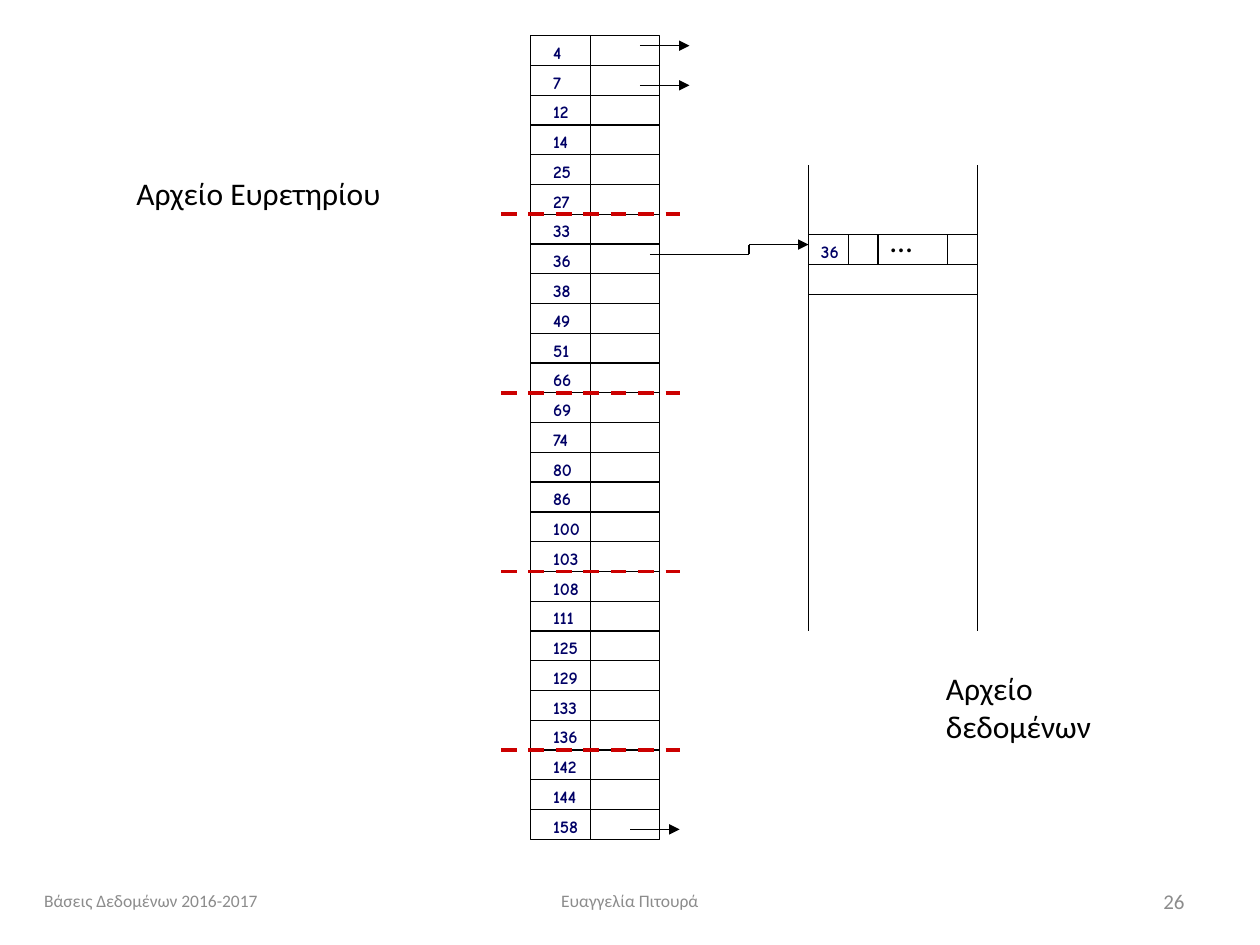
from lxml import etree
from pptx import Presentation
from pptx.dml.color import RGBColor
from pptx.enum.dml import MSO_LINE
from pptx.enum.shapes import MSO_CONNECTOR, MSO_SHAPE
from pptx.enum.text import MSO_ANCHOR, PP_ALIGN
from pptx.oxml.ns import qn
from pptx.util import Cm, Pt

STRAIGHT = MSO_CONNECTOR.STRAIGHT
RECTANGLE = MSO_SHAPE.RECTANGLE
DASH = MSO_LINE.DASH
TOP, MIDDLE = MSO_ANCHOR.TOP, MSO_ANCHOR.MIDDLE
LEFT, CENTER, RIGHT = PP_ALIGN.LEFT, PP_ALIGN.CENTER, PP_ALIGN.RIGHT

COLORS = {"line": "000000", "text": "000000", "key": "000066",
          "separator": "CC0000", "footer": "8C8C8C"}
BODY_FONT, KEY_FONT = "Calibri", "Comic Neue"
ROW_HEIGHT = 0.6
ROWS_PER_BLOCK = 3
KEYS = [4, 7, 12, 14, 25, 27, 33, 36, 38, 49, 51, 66, 69, 74, 80, 86, 100,
        103, 108, 111, 125, 129, 133, 136, 142, 144, 158]


def rgb(name):
    """Return the named colour."""
    return RGBColor.from_string(COLORS[name])


def add_line(slide, x1, y1, x2, y2, color="line", weight=0.75, dash=None, arrow=False):
    """Draw a straight line between two points given in centimetres."""
    connector = slide.shapes.add_connector(STRAIGHT, Cm(x1), Cm(y1), Cm(x2), Cm(y2))
    connector.line.color.rgb = rgb(color)
    connector.line.width = Pt(weight)
    if dash:
        connector.line.dash_style = dash
    if arrow:
        etree.SubElement(connector.line._get_or_add_ln(), qn("a:tailEnd"), type="triangle")
    etree.SubElement(connector._element.spPr, qn("a:effectLst"))


def add_text(slide, text, left, top, width, height, size=18, color="text",
             font=BODY_FONT, bold=False, align=LEFT, anchor=TOP):
    """Place one paragraph of text in a wrapping box."""
    shape = slide.shapes.add_textbox(Cm(left), Cm(top), Cm(width), Cm(height))
    frame = shape.text_frame
    frame.word_wrap = True
    frame.vertical_anchor = anchor
    paragraph = frame.paragraphs[0]
    paragraph.text = text
    paragraph.alignment = align
    paragraph.font.name = font
    paragraph.font.size = Pt(size)
    paragraph.font.bold = bold
    paragraph.font.color.rgb = rgb(color)


def add_key(slide, key, left, top):
    """Write a key value in a cell."""
    add_text(slide, str(key), left, top, 1.2, 0.69, 10, "key", KEY_FONT, True)


def add_block(slide, left, top, width, key_width):
    """Draw one index block with its rows and its key column."""
    height = ROWS_PER_BLOCK * ROW_HEIGHT
    shape = slide.shapes.add_shape(RECTANGLE, Cm(left), Cm(top), Cm(width), Cm(height))
    shape.shadow.inherit = False
    shape.fill.background()
    shape.line.color.rgb = rgb("line")
    shape.line.width = Pt(0.75)
    for row in range(1, ROWS_PER_BLOCK):
        y = top + row * ROW_HEIGHT
        add_line(slide, left, y, left + width, y)
    add_line(slide, left + key_width, top, left + key_width, top + height)


def add_index_file(slide, left, top, width):
    """Draw the index file with its keys, page separators and pointers."""
    for row in range(0, len(KEYS), ROWS_PER_BLOCK):
        add_block(slide, left, top + row * ROW_HEIGHT, width, 1.2)
    for row in range(6, len(KEYS), 6):
        y = top + row * ROW_HEIGHT
        add_line(slide, left - 0.6, y, left + 3, y, "separator", 2.25, DASH)
    for row, key in enumerate(KEYS):
        add_key(slide, key, left + 0.2, top + row * ROW_HEIGHT)
    for x, y in [(2.2, 0.2), (2.2, 1), (2, 16)]:
        add_line(slide, left + x, top + y, left + x + 1, top + y, arrow=True)


def add_data_file(slide, left, top, width, height):
    """Draw the data file with one detailed record."""
    right, record_top = left + width, top + 1.4
    for x in (left, right):
        add_line(slide, x, top, x, top + height)
    for row in range(3):
        y = record_top + row * ROW_HEIGHT
        add_line(slide, left, y, right, y)
    for offset in (0.8, 1.4, 2.8):
        x = left + offset
        add_line(slide, x, record_top, x, record_top + ROW_HEIGHT)
    add_key(slide, 36, left, record_top)
    add_text(slide, "…", left + 1.4, record_top - 0.4, 1.2, 1.09)


def add_record_pointer(slide, left, top, width, height):
    """Draw the stepped pointer from an index entry to its record."""
    bend, right, bottom = left + 2, left + width, top + height
    add_line(slide, left, bottom, bend, bottom)
    add_line(slide, bend, bottom, bend, top)
    add_line(slide, bend, top, right, top, arrow=True)


def add_footer(slide, left, top, width, height):
    """Place the course, author and slide number along the bottom."""
    style = {"color": "footer", "anchor": MIDDLE}
    add_text(slide, "Βάσεις Δεδομένων 2016-2017", left, top, 5.92, height, 10, **style)
    add_text(slide, "Ευαγγελία Πιτουρά", left + 8.03, top, 8.05, height, 10,
             align=CENTER, **style)
    add_text(slide, "26", left + width - 5.92, top, 5.92, height, 12, align=RIGHT, **style)


def main():
    """Build the slide and save the presentation."""
    presentation = Presentation()
    presentation.slide_width, presentation.slide_height = Cm(25.4), Cm(19.05)
    slide = presentation.slides.add_slide(presentation.slide_layouts[6])
    add_index_file(slide, 10.7, 0.72, 2.6)
    add_data_file(slide, 16.3, 3.33, 3.4, 9.4)
    add_record_pointer(slide, 13.1, 4.93, 3.2, 0.2)
    add_text(slide, "Αρχείο Ευρετηρίου", 2.5, 3.38, 7.4, 1.02)
    add_text(slide, "Αρχείο δεδομένων", 18.82, 13.36, 4, 1.78)
    add_footer(slide, 0.64, 17.65, 23.49, 1.02)
    presentation.save("out.pptx")


if __name__ == "__main__":
    main()
